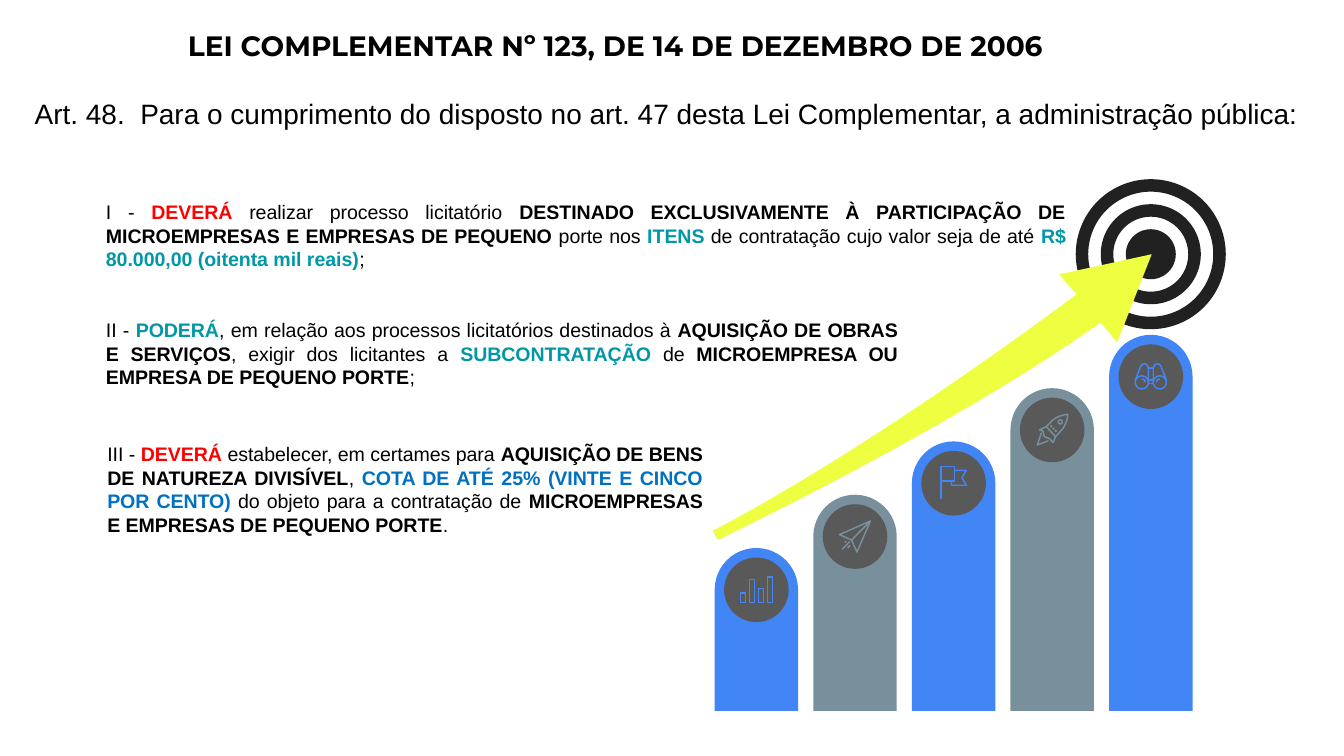
import math

import pptx
import pptx.dml.color
import pptx.enum.shapes
import pptx.enum.text
import pptx.util

BLACK, RED, TEAL, BLUE = "000000", "FF0000", "0097A7", "0070C0"
COLUMN_BLUE, COLUMN_GRAY = "4285F4", "78909C"
DISC, TARGET, ARROW = "595959", "212121", "EEFF41"
SHAPES = pptx.enum.shapes.MSO_SHAPE
ALIGN = pptx.enum.text.PP_ALIGN


def color_of(hex_color):
    return pptx.dml.color.RGBColor.from_string(hex_color)


def add_run(paragraph, text, size=10.5, font="Arial", color=BLACK, bold=False):
    run = paragraph.add_run()
    run.text = text
    run.font.size = pptx.util.Pt(size)
    run.font.name = font
    run.font.bold = bold
    run.font.color.rgb = color_of(color)


def arc(x, y, radius, start=0, end=360, steps=24):
    """Points along a circular arc, angles in degrees clockwise from the right."""
    angles = [math.radians(start + (end - start) * i / steps) for i in range(steps + 1)]
    return [(x + radius * math.cos(a), y + radius * math.sin(a)) for a in angles]


def bezier(start, control_1, control_2, end, steps=24):
    """Points along a cubic curve."""
    points = []
    for i in range(steps + 1):
        t = i / steps
        weights = ((1 - t) ** 3, 3 * t * (1 - t) ** 2, 3 * t * t * (1 - t), t ** 3)
        points.append(tuple(
            sum(w * p[axis] for w, p in zip(weights, (start, control_1, control_2, end)))
            for axis in (0, 1)))
    return points


class SlideBuilder:
    def __init__(self, slide, icon_line=0.8):
        self.slide = slide
        self.icon_line = icon_line

    def text(self, left, top, width, height, runs, align=ALIGN.LEFT):
        """Each run is a pair of text and format keywords."""
        box = self.slide.shapes.add_textbox(*map(pptx.util.Pt, (left, top, width, height)))
        box.text_frame.word_wrap = True
        paragraph = box.text_frame.paragraphs[0]
        paragraph.alignment = align
        for text, text_format in runs:
            add_run(paragraph, text, **text_format)

    def shape(self, kind, left, top, width, height, color, adjustment=None):
        shape = self.slide.shapes.add_shape(
            kind, *map(pptx.util.Pt, (left, top, width, height)))
        if adjustment is not None:
            shape.adjustments[0] = adjustment
        self.fill(shape, color)

    def circle(self, x, y, radius, color, ring=None):
        kind = SHAPES.DONUT if ring else SHAPES.OVAL
        self.shape(kind, x - radius, y - radius, 2 * radius, 2 * radius, color,
                   ring / (2 * radius) if ring else None)

    def fill(self, shape, color):
        shape.shadow.inherit = False
        shape.fill.solid()
        shape.fill.fore_color.rgb = color_of(color)
        shape.line.fill.background()

    def freeform(self, contours, x=0, y=0):
        """Builds contours around (x, y); one ending where it starts is closed."""
        contours = [[(pptx.util.Pt(x + dx), pptx.util.Pt(y + dy)) for dx, dy in contour]
                    for contour in contours]
        builder = self.slide.shapes.build_freeform(*contours[0][0])
        for index, contour in enumerate(contours):
            if index:
                builder.move_to(*contour[0])
            builder.add_line_segments(contour[1:], close=contour[0] == contour[-1])
        return builder.convert_to_shape()

    def polygon(self, points, color):
        self.fill(self.freeform([points + points[:1]]), color)

    def icon(self, x, y, contours, color):
        shape = self.freeform(contours, x, y)
        shape.shadow.inherit = False
        shape.fill.background()
        shape.line.color.rgb = color_of(color)
        shape.line.width = pptx.util.Pt(self.icon_line)


def bars_icon():
    bottom, half = 6.8, 1.3
    contours = []
    for index, top in enumerate((1.8, -5.4, -0.7, -7)):
        x = -7.1 + 4.8 * index
        contours.append([(x - half, bottom), (x - half, top), (x + half, top),
                         (x + half, bottom), (x - half, bottom)])
    return contours


def binoculars_icon():
    contours = [[(-0.9, y), (0.9, y)] for y in (-4.7, 1.8, 3.6)]
    for side in (-1, 1):
        half = [arc(4.8, 3.1, 3.5),
                arc(4.8, 3.1, 1.8, 180, 270),
                [(8.4, 2), (5.4, -5.6), (4.6, -6.6), (3.4, -6.9), (2.1, -6.4),
                 (1.3, -4.7), (1.3, 3.6)]]
        contours += [[(side * x, y) for x, y in contour] for contour in half]
    return contours


PLANE_ICON = [
    [(8.3, -8.3), (-8.3, -1), (-1.8, 1.9), (1.1, 8.3), (8.3, -8.3)],
    [(-1.8, 1.9), (8.3, -8.3)],
    [(-2.5, 4.7), (-3.9, 6.1)],
    [(-4.7, 2.6), (-5.4, 3.2)],
    [(-2.8, 2.8), (-6.8, 6.8)],
]
FLAG_ICON = [
    [(-6.8, 8.3), (-6.8, -9), (0.4, -9), (0.4, -1.1), (-6.8, -1.1)],
    [(0.4, -6.8), (6.8, -6.8), (4.5, -3), (6.8, 1.1), (-1.1, 1.1), (-1.1, -1.1)],
]
ROCKET_ICON = [
    bezier((8.3, -8.3), (6, -8.3), (1.5, -6.8), (-0.5, -4.5))
    + [(-3.2, -1.8), (-6.8, 0), (-5, 0.6), (-4.2, 3.6), (-1.4, 4.7), (0.4, 6.8), (1.8, 3.6)]
    + bezier((4.7, 0.4), (7, -1.8), (8.3, -6), (8.3, -8.3)),
    [(-3.2, -1.8), (1.8, 3.6)],
    [(-5.8, 1.5), (-8, 8), (-2, 5.8)],
    arc(4.3, -4.3, 1.1),
    *[arc(-0.5 + 1.2 * i, -1.9 + 1.2 * i, 0.2) for i in range(3)],
]

BOLD = {"bold": True}
PLAIN = {}
MUST = {"bold": True, "color": RED}
KEY = {"bold": True, "color": TEAL}
QUOTA = {"bold": True, "color": BLUE}
CLAUSES = [
    (49.7, 103.7, 528.5, 45.4, [
        ("I - ", PLAIN), ("DEVERÁ", MUST), (" realizar processo licitatório ", PLAIN),
        ("DESTINADO EXCLUSIVAMENTE À PARTICIPAÇÃO DE MICROEMPRESAS E EMPRESAS DE PEQUENO", BOLD),
        (" porte nos ", PLAIN), ("ITENS ", KEY),
        ("de contratação cujo valor seja de até ", PLAIN),
        ("R$ 80.000,00 (oitenta mil reais)", KEY), (";", PLAIN)]),
    (49.7, 167, 438.5, 45.4, [
        ("II - ", PLAIN), ("PODERÁ", KEY),
        (", em relação aos processos licitatórios destinados à ", PLAIN),
        ("AQUISIÇÃO DE OBRAS E SERVIÇOS", BOLD), (", exigir dos licitantes a ", PLAIN),
        ("SUBCONTRATAÇÃO", KEY), (" de ", PLAIN),
        ("MICROEMPRESA OU EMPRESA DE PEQUENO PORTE", BOLD), (";", PLAIN)]),
    (50.4, 233.3, 333.4, 58.3, [
        ("III - ", PLAIN), ("DEVERÁ", MUST), (" estabelecer, em certames para ", PLAIN),
        ("AQUISIÇÃO DE BENS DE NATUREZA DIVISÍVEL", BOLD), (", ", PLAIN),
        ("COTA DE ATÉ 25% (VINTE E CINCO POR CENTO)", QUOTA),
        (" do objeto para a contratação de ", PLAIN),
        ("MICROEMPRESAS E EMPRESAS DE PEQUENO PORTE", BOLD), (".", PLAIN)]),
]


def main():
    presentation = pptx.Presentation()
    presentation.slide_width = pptx.util.Pt(720)
    presentation.slide_height = pptx.util.Pt(405)
    builder = SlideBuilder(presentation.slides.add_slide(presentation.slide_layouts[6]))

    ring = 6.7
    for rings, thickness in ((6, ring), (4, ring), (2, None)):
        builder.circle(616.5, 136.2, rings * ring, TARGET, thickness)

    icons = [bars_icon(), PLANE_ICON, FLAG_ICON, ROCKET_ICON, binoculars_icon()]
    width, bottom = 44.7, 380.9
    columns = [(405.2 + 52.83 * i, 293.6 - 28.55 * i, (COLUMN_BLUE, COLUMN_GRAY)[i % 2])
               for i in range(len(icons))]
    for x, top, color in columns:
        builder.shape(SHAPES.ROUND_2_SAME_RECTANGLE, x - width / 2, top, width,
                      bottom - top, color, 0.5)

    builder.polygon(
        [(617, 136.2), (567.4, 147), (576.7, 157.7)]
        + bezier((576.7, 157.7), (571, 162), (468.7, 239), (381.8, 284.4))
        + bezier((384.6, 289.3), (418.3, 272.9), (518.4, 223.2), (589.7, 172.8))
        + [(598.5, 183.5)], ARROW)

    for (x, top, color), icon in zip(columns, icons):
        builder.circle(x, top + 22.4, 17.3, DISC)
        builder.icon(x, top + 22.4, icon, color)

    builder.text(11.5, 48.2, 697.7, 43.9, [
        ("Art. 48.  Para o cumprimento do disposto no art. 47 desta Lei Complementar, "
         "a administração pública:", {"size": 15})])
    builder.text(93.6, 11.5, 532.8, 25.2, [
        ("LEI COMPLEMENTAR Nº 123, DE 14 DE DEZEMBRO DE 2006",
         {"size": 15, "font": "Montserrat", "bold": True})])
    for left, top, box_width, height, runs in CLAUSES:
        builder.text(left, top, box_width, height, runs, align=ALIGN.JUSTIFY)

    presentation.save("out.pptx")


if __name__ == "__main__":
    main()
